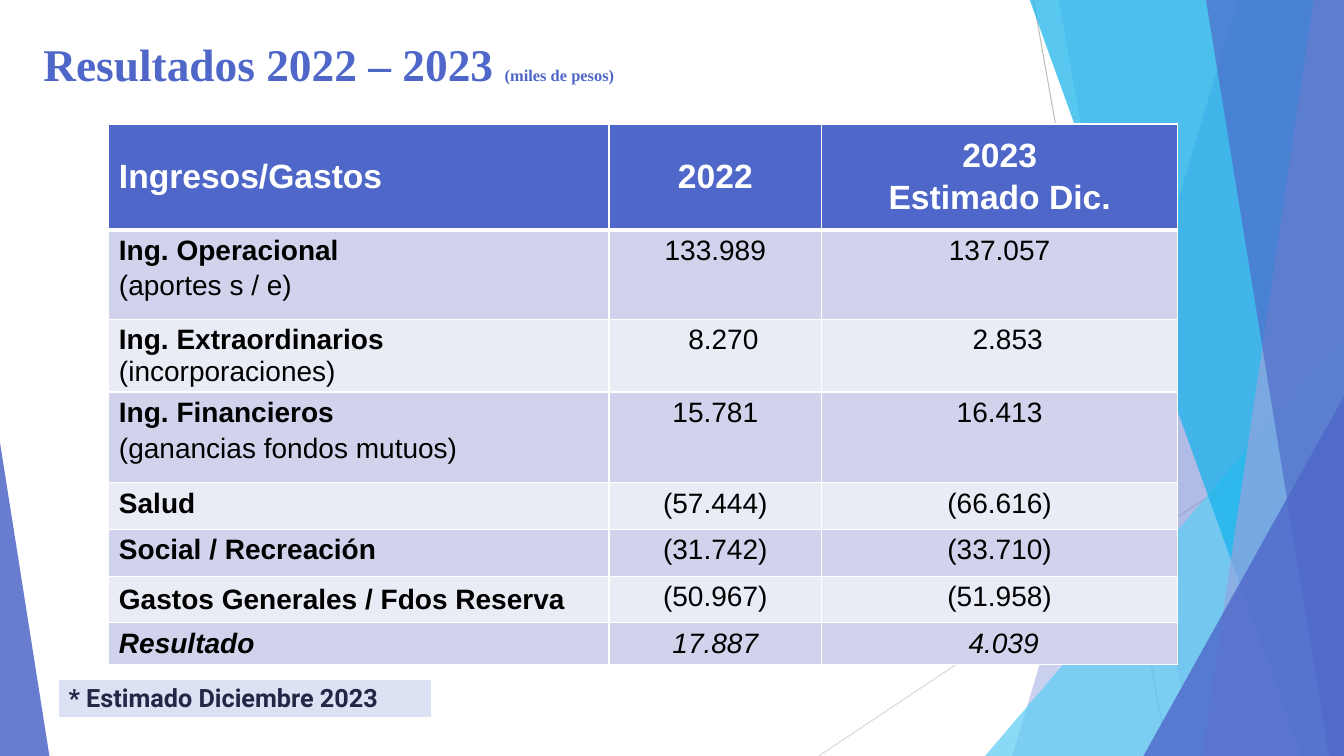
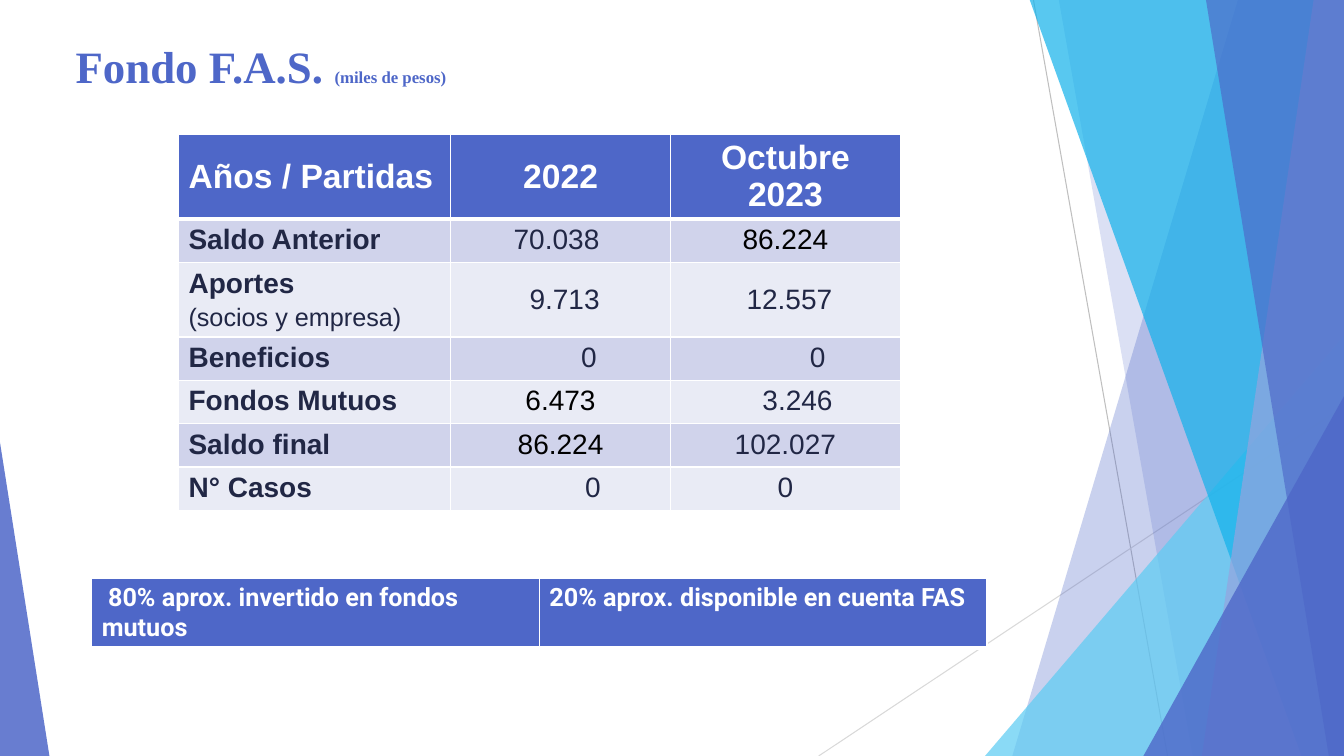
import pptx
import pptx.util
import pptx.dml.color
import pptx.enum.shapes
import pptx.enum.text
import pptx.oxml
import pptx.oxml.ns
import lxml.etree

Inch, Pt = pptx.util.Inches, pptx.util.Pt
RGB = pptx.dml.color.RGBColor
Shape = pptx.enum.shapes.MSO_SHAPE
Align, Anchor = pptx.enum.text.PP_ALIGN, pptx.enum.text.MSO_ANCHOR
qn = pptx.oxml.ns.qn

# Shared look
WIDE, HIGH = 13.33, 7.5
WHITE, BLACK = RGB(255, 255, 255), RGB(0, 0, 0)
BLUE, NAVY = RGB(0x4E, 0x67, 0xC8), RGB(0x21, 0x27, 0x45)
CYAN, AQUA = RGB(0x12, 0xB2, 0xEB), RGB(0x5E, 0xCC, 0xF3)
LILAC, PALE = RGB(0x95, 0xA4, 0xDE), RGB(0xDC, 0xE1, 0xF4)
BANDS = RGB(0xD0, 0xD3, 0xEB), RGB(0xE9, 0xEB, 0xF5)
GRAY, LIGHT = RGB(0xBF, 0xBF, 0xBF), RGB(0xD9, 0xD9, 0xD9)
SPACE = 0.08  # one step of number indent, inches
UNIT = "(miles de pesos)"

# Backdrop: thin lines, then panes from back to front
LINES = [((10.25, 0), (11.58, HIGH), GRAY), ((WIDE, 4.03), (8.12, HIGH), LIGHT)]
PANES = [  # slanted pane: top x, foot x; triangle: left, top, width, apex
    ("pane", (12.28, 10.04), BLUE, 30),
    ("pane", (10.5, 11.83), BLUE, 20),
    ("tri", (9.77, 3.33, 3.56, 1), AQUA, 72),
    ("pane", (10.21, 12.91), CYAN, 70),
    ("pane", (13.03, 11.92), LILAC, 70),
    ("pane", (11.96, 13.18), BLUE, 65),
    ("tri", (11.34, 3.93, 1.99, 1), BLUE, 80),
    ("tri", (0, 4.39, 0.49, 0), BLUE, 85),
]


def cell(*paras, **fmt):
    """Cell content: paragraphs and format."""
    return paras, fmt


def num(text, lead=0, **fmt):
    """Centred figure, moved right by lead steps."""
    return cell(text, lead=lead, align=Align.CENTER, **fmt)


def label(*paras, **fmt):
    return cell(*paras, bold=True, **fmt)


def under(text, **fmt):
    """Plain paragraph below a bold label."""
    return [(text, dict(bold=False, **fmt))]


# Content
MID = dict(mid=True)
SLOPE = dict(mid=True, italic=True)
DARK = dict(color=BLACK)
RESULTS = dict(
    at=(1.08, 1.23), cols=(4.96, 2.11, 3.53), color=BLACK,
    heads=[["Ingresos/Gastos"], ["2022"], ["2023", "Estimado Dic."]],
    highs=(1.05, 0.89, 0.72, 0.9, 0.46, 0.47, 0.46, 0.4),
    rows=[
        (label("Ing. Operacional", under("(aportes s / e)")),
         num("133.989"), num("137.057")),
        (label([("Ing. Extraordinarios ", {})] + under("(incorporaciones)")),
         num("8.270", 2), num("2.853", 2)),
        (label("Ing. Financieros", under("(ganancias fondos mutuos)")),
         num("15.781"), num("16.413")),
        (label("Salud"), num("(57.444)"), num("(66.616)")),
        (label("Social / Recreación"), num("(31.742)"), num("(33.710)")),
        (label("Gastos Generales / Fdos Reserva", **MID),
         num("(50.967)"), num("(51.958)")),
        (label("Resultado", **SLOPE),
         num("17.887", **SLOPE), num("4.039", 1, **SLOPE)),
    ])
FUND = dict(
    at=(1.77, 1.33), cols=(2.7, 2.18, 2.28), color=NAVY,
    heads=[["Años / Partidas"], ["2022"], ["Octubre 2023"]],
    highs=(0.84, 0.43, 0.74, 0.43, 0.43, 0.43, 0.43),
    rows=[
        (label("Saldo Anterior"), num("70.038", -1), num("86.224", **DARK)),
        (label("Aportes", under("(socios y empresa)", size=18), **MID),
         num("9.713", 1, **MID), num("12.557", 1, **MID)),
        (label("Beneficios"), num("0", 7), num("0", 8)),
        (label("Fondos Mutuos"), num("6.473", **DARK), num("3.246", 3)),
        (label("Saldo final"), num("86.224", **DARK), num("102.027")),
        (label("N° Casos"), num("0", 8), num("0")),
    ])
NOTE = dict(at=(0.58, 6.74), cols=(3.7,), high=0.37, fill=PALE, color=NAVY,
            texts=["* Estimado Diciembre 2023"])
SHARE = dict(at=(0.91, 5.74), cols=(4.44, 4.44), high=0.66, fill=BLUE,
             color=WHITE, texts=[" 80% aprox. invertido en fondos mutuos",
                                 "20% aprox. disponible en cuenta FAS"])
SLIDES = [
    dict(title="Resultados 2022 – 2023 ", sizes=(32.4, 11.7),
         box=(0.33, 0.27, 9.4, 0.71), table=RESULTS, strip=NOTE),
    dict(title="Fondo F.A.S. ", sizes=(32, 12),
         box=(0.65, 0.28, 9.4, 0.75), table=FUND, strip=SHARE),
]


def write(frame, paras, size=20, font="Arial", color=BLACK, bold=False,
          italic=False, align=Align.LEFT):
    """Fill a text frame; a paragraph is a string or a list of runs."""
    frame.word_wrap = True
    for i, runs in enumerate(paras):
        para = frame.add_paragraph() if i else frame.paragraphs[0]
        para.alignment = align
        para.space_before = Pt(round(0.16 * size, 1) if i else 0)
        for text, own in [(runs, {})] if isinstance(runs, str) else runs:
            run = para.add_run()
            run.text = text
            run.font.name = font
            run.font.size = Pt(own.get("size", size))
            run.font.bold = own.get("bold", bold)
            run.font.italic = italic
            run.font.color.rgb = color


def border(box, base):
    """White cell borders, base being the width of the lower one."""
    props = box._tc.get_or_add_tcPr()
    for i, (side, wide) in enumerate(zip("LRTB", (1, 1, 1, base))):
        line = lxml.etree.Element(qn("a:ln" + side), w=str(Pt(wide)))
        fill = lxml.etree.SubElement(line, qn("a:solidFill"))
        lxml.etree.SubElement(fill, qn("a:srgbClr"), val=str(WHITE))
        props.insert(i, line)


def paint(box, content, fill, base=1, **look):
    """Format one table cell."""
    paras, fmt = content
    fmt = {**look, **fmt}
    lead = fmt.pop("lead", 0) * SPACE
    box.vertical_anchor = Anchor.MIDDLE if fmt.pop("mid", False) else Anchor.TOP
    box.margin_left = Inch(0.1 + max(lead, 0))
    box.margin_right = Inch(0.1 + max(-lead, 0))
    box.fill.solid()
    box.fill.fore_color.rgb = fill
    border(box, base)
    write(box.text_frame, paras, **fmt)


def grid(slide, at, cols, highs):
    """Empty table with given column widths and row heights."""
    size = (sum(cols), sum(highs))
    table = slide.shapes.add_table(
        len(highs), len(cols), *map(Inch, at + size)).table
    for col, wide in zip(table.columns, cols):
        col.width = Inch(wide)
    for row, high in zip(table.rows, highs):
        row.height = Inch(high)
    return table


def ledger(slide, at, cols, color, heads, highs, rows):
    table = grid(slide, at, cols, highs)
    for c, head in enumerate(heads):
        paint(table.cell(0, c), cell(*head), BLUE, 3, mid=True, size=24,
              bold=True, color=WHITE,
              align=Align.CENTER if c else Align.LEFT)
    for r, row in enumerate(rows):
        for c, content in enumerate(row):
            paint(table.cell(r + 1, c), content, BANDS[r % 2], color=color)


def strip(slide, at, cols, high, fill, color, texts):
    table = grid(slide, at, cols, [high])
    for c, text in enumerate(texts):
        paint(table.cell(0, c), cell(text), fill, 3, size=18, bold=True,
              font="Roboto", color=color)


def pane(shapes, top, foot):
    form = shapes.build_freeform(Inch(top), Inch(-0.01))
    ends = [(WIDE, -0.01), (WIDE, HIGH), (foot, HIGH)]
    form.add_line_segments([(Inch(x), Inch(y)) for x, y in ends])
    return form.convert_to_shape()


def tri(shapes, left, top, wide, apex):
    shape = shapes.add_shape(Shape.ISOSCELES_TRIANGLE,
                             *map(Inch, (left, top, wide, HIGH - top)))
    shape.adjustments[0] = apex
    return shape


def backdrop(slide, layout):
    """Draw the shared art and hand it to the layout, behind its title."""
    for holder in list(layout.placeholders):
        if holder.placeholder_format.idx:
            layout.shapes.element.remove(holder.element)
    art = []
    for start, end, color in LINES:
        line = slide.shapes.add_connector(
            pptx.enum.shapes.MSO_CONNECTOR.STRAIGHT, *map(Inch, start + end))
        line.line.color.rgb = color
        line.line.width = Pt(0.75)
        lxml.etree.SubElement(line.element.spPr, qn("a:effectLst"))
        art.append(line)
    for kind, dims, color, alpha in PANES:
        shape = {"pane": pane, "tri": tri}[kind](slide.shapes, *dims)
        shape.shadow.inherit = False
        shape.line.fill.background()
        shape.fill.solid()
        shape.fill.fore_color.rgb = color
        tint = next(shape.element.iter(qn("a:srgbClr")))
        lxml.etree.SubElement(tint, qn("a:alpha"), val=str(alpha * 1000))
        art.append(shape)
    for i, shape in enumerate(art):
        layout.shapes.element.insert(2 + i, shape.element)


def head(slide, title, sizes, box):
    holder = slide.shapes.title
    holder.left, holder.top, holder.width, holder.height = map(Inch, box)
    frame = holder.text_frame
    frame.auto_size = pptx.enum.text.MSO_AUTO_SIZE.NONE
    frame.vertical_anchor = Anchor.MIDDLE
    write(frame, [[(title, {}), (UNIT, dict(size=sizes[1]))]], size=sizes[0],
          font="Times New Roman", color=BLUE, bold=True)


def main():
    deck = pptx.Presentation()
    deck.slide_width, deck.slide_height = Inch(WIDE), Inch(HIGH)
    layout = deck.slide_layouts[5]
    for i, page in enumerate(SLIDES):
        slide = deck.slides.add_slide(layout)
        if i == 0:
            backdrop(slide, layout)
        head(slide, page["title"], page["sizes"], page["box"])
        ledger(slide, **page["table"])
        strip(slide, **page["strip"])
    deck.save("out.pptx")


if __name__ == "__main__":
    main()
